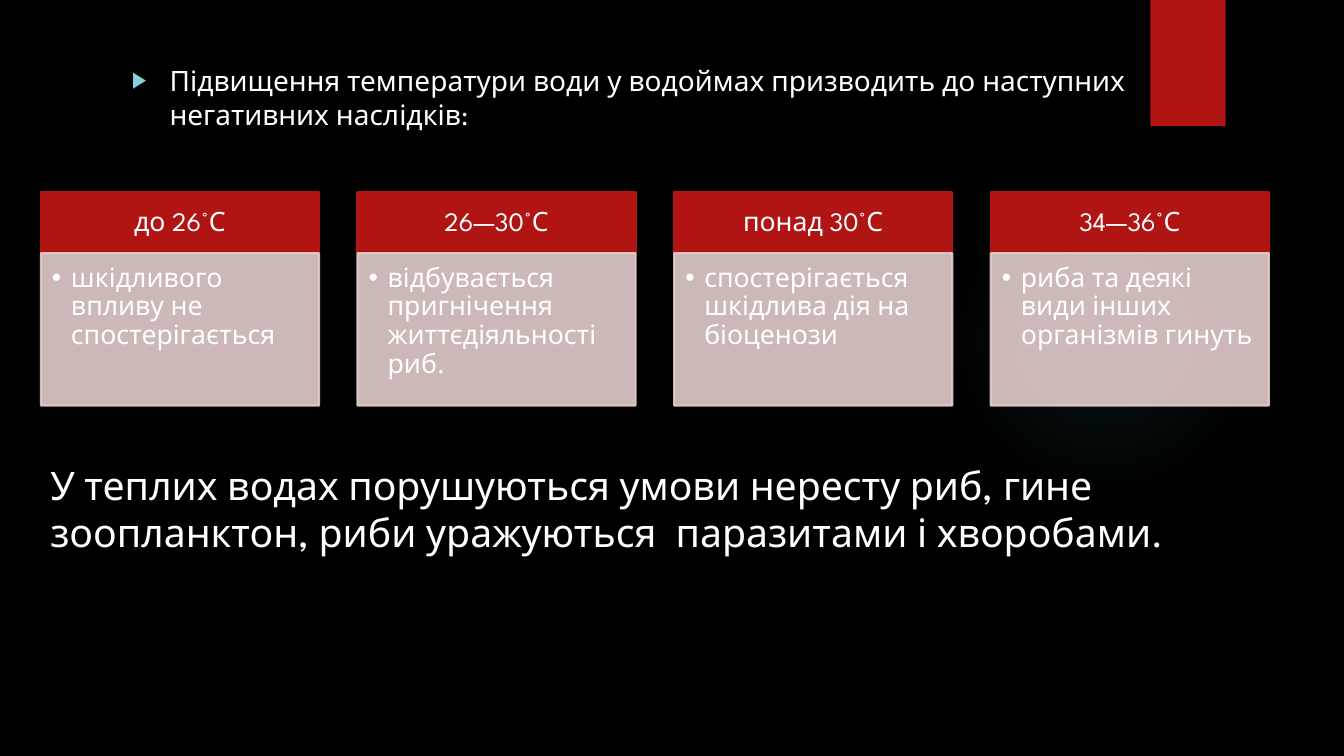
"""Build a slide on how warming water harms life in ponds and rivers."""
import lxml.etree
import pptx
import pptx.dml.color
import pptx.enum.shapes
import pptx.enum.text
import pptx.oxml.ns
import pptx.util

Cm = pptx.util.Cm
Pt = pptx.util.Pt
qn = pptx.oxml.ns.qn
Align = pptx.enum.text.PP_ALIGN
Anchor = pptx.enum.text.MSO_ANCHOR
Kind = pptx.enum.shapes.MSO_SHAPE

BLACK = pptx.dml.color.RGBColor(0x00, 0x00, 0x00)
WHITE = pptx.dml.color.RGBColor(0xFF, 0xFF, 0xFF)
RED = pptx.dml.color.RGBColor(0xB0, 0x15, 0x13)
PINK = pptx.dml.color.RGBColor(0xE4, 0xCC, 0xCC)
TEAL = pptx.dml.color.RGBColor(0x50, 0xB9, 0xC1)
AQUA = pptx.dml.color.RGBColor(0x8A, 0xD0, 0xD6)

INTRO = "Підвищення температури води у водоймах призводить до наступних негативних наслідків:"
CLOSE = "У теплих водах порушуються умови нересту риб, гине  зоопланктон, риби уражуються  паразитами і хворобами."
CARDS = [
    ("до 26°С", "шкідливого впливу не спостерігається"),
    ("26—30°С", "відбувається пригнічення життєдіяльності риб."),
    ("понад 30°С", "спостерігається шкідлива дія на біоценози"),
    ("34—36°С", "риба та деякі види інших організмів гинуть"),
]


def add(parent, tag, **attrs):
    return lxml.etree.SubElement(parent, qn(tag), attrs)


class Deck:
    """Hold the text style and the current slide."""

    def __init__(self, font, ink):
        self.font, self.ink = font, ink
        self.show = pptx.Presentation()
        self.show.slide_width, self.show.slide_height = Cm(33.87), Cm(19.05)
        self.slide = self.show.slides.add_slide(self.show.slide_layouts[1])
        self.slide.background.fill.solid()
        self.slide.background.fill.fore_color.rgb = BLACK
        title = self.slide.shapes.title._element
        title.getparent().remove(title)

    def fill_in(self, frame, text, size, pads=None, spacing=1.0):
        frame.word_wrap = True
        if pads:
            (frame.margin_left, frame.margin_top,
             frame.margin_right, frame.margin_bottom) = map(Cm, pads)
        para = frame.paragraphs[0]
        para.alignment = Align.LEFT
        para.line_spacing = spacing
        para.space_before = Pt(0)
        run = para.add_run()
        run.text = text
        run.font.name, run.font.size = self.font, Pt(size)
        run.font.color.rgb = self.ink
        return para

    def bullet(self, para, mark, indent, color, scale=100):
        props = para._p.get_or_add_pPr()
        props.set("marL", str(Cm(indent)))
        props.set("indent", str(-Cm(indent)))
        add(add(props, "a:buClr"), "a:srgbClr", val=str(color))
        add(props, "a:buSzPct", val=str(scale * 1000))
        add(props, "a:buFont", typeface="Arial")
        add(props, "a:buChar", char=mark)

    def shape(self, box, fill=None, kind=Kind.RECTANGLE, edge=False, alpha=None):
        shape = self.slide.shapes.add_shape(kind, *map(Cm, box))
        shape.shadow.inherit = False
        shape.line.fill.background()
        if fill is None:
            shape.fill.background()
        else:
            shape.fill.solid()
            shape.fill.fore_color.rgb = fill
        if edge:
            shape.line.color.rgb = fill
            shape.line.width = Pt(1.5)
        if alpha:
            for color in shape._element.spPr.iter(qn("a:srgbClr")):
                add(color, "a:alpha", val=str(alpha * 1000))
        return shape

    def glow(self, box, color, stops):
        props = self.shape(box, kind=Kind.OVAL)._element.spPr
        grad = lxml.etree.Element(qn("a:gradFill"), rotWithShape="1")
        items = add(grad, "a:gsLst")
        for place, alpha in stops:
            stop = add(items, "a:gs", pos=str(place * 1000))
            tint = add(stop, "a:srgbClr", val=str(color))
            add(tint, "a:alpha", val=str(alpha * 1000))
        round_off = add(grad, "a:path", path="circle")
        add(round_off, "a:fillToRect", l="50000", t="50000", r="50000", b="50000")
        props.replace(props.find(qn("a:noFill")), grad)

    def intro(self, box, text):
        body = self.slide.placeholders[1]
        body.left, body.top, body.width, body.height = map(Cm, box)
        frame = body.text_frame
        frame.auto_size = pptx.enum.text.MSO_AUTO_SIZE.NONE
        frame.vertical_anchor = Anchor.TOP
        self.bullet(self.fill_in(frame, text, 20), "▶", 0.95, AQUA, 80)

    def card(self, left, top, head, note):
        width, cap, depth = 7.01, 1.53, 3.84
        bar = self.shape((left, top, width, cap), RED, edge=True)
        bar.text_frame.vertical_anchor = Anchor.MIDDLE
        para = self.fill_in(bar.text_frame, head, 19, (0.38, 0.2, 0.38, 0.2), 0.9)
        para.alignment = Align.CENTER
        panel = self.shape((left, top + cap, width, depth), PINK, edge=True, alpha=90)
        panel.text_frame.vertical_anchor = Anchor.TOP
        para = self.fill_in(panel.text_frame, note, 19, (0.28, 0.28, 0.38, 0.43), 0.9)
        self.bullet(para, "•", 0.48, self.ink)

    def text(self, box, text, size):
        area = self.slide.shapes.add_textbox(*map(Cm, box))
        self.fill_in(area.text_frame, text, size)


def main():
    deck = Deck("League Spartan", WHITE)
    deck.glow((23.9, 4.65, 7.82, 7.82), TEAL, [(0, 7), (36, 6), (69, 0)])
    deck.shape((28.99, 0, 1.9, 3.18), RED)
    deck.intro((3.07, 1.47, 28.32, 15.88), INTRO)
    for index, (head, note) in enumerate(CARDS):
        deck.card(1.03 + 7.98 * index, 4.85, head, note)
    deck.text((1.02, 11.51, 30.96, 3.84), CLOSE, 28)
    deck.show.save("out.pptx")


if __name__ == "__main__":
    main()
